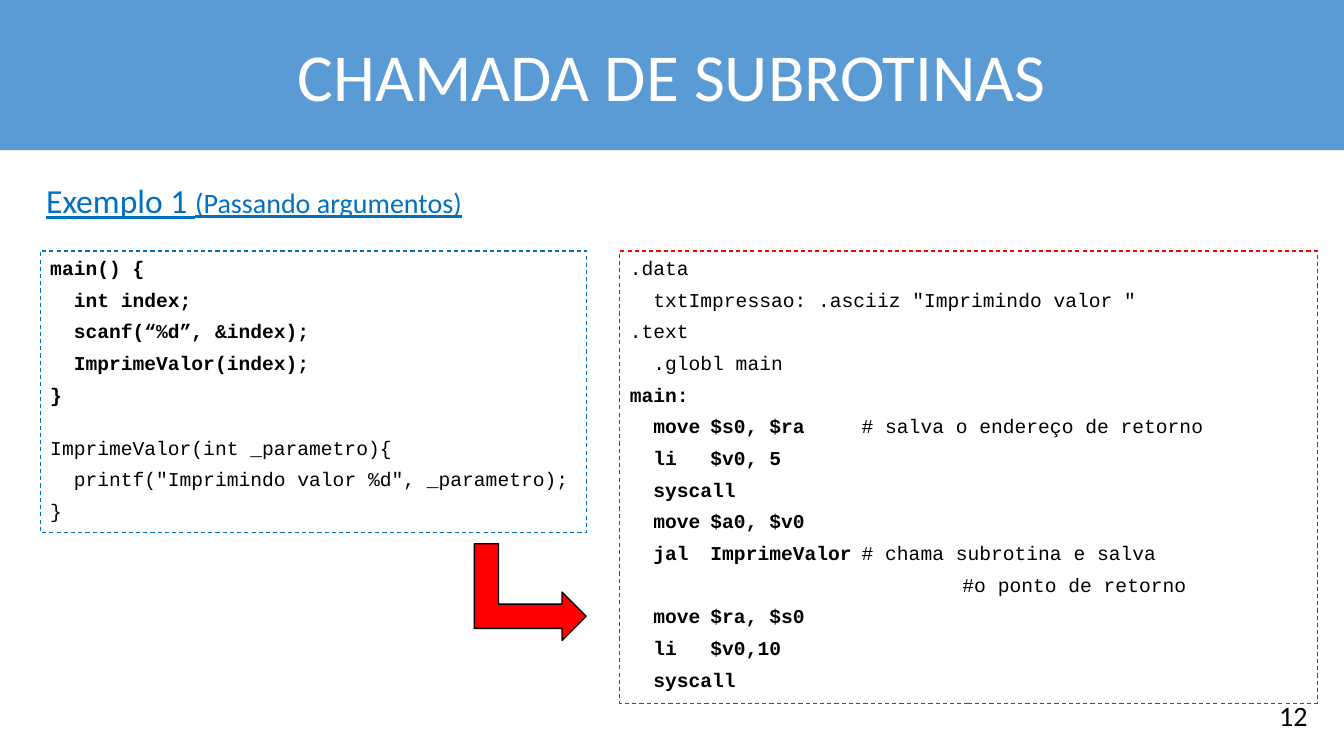
import dataclasses

import pptx
import pptx.dml.color
import pptx.enum.dml
import pptx.enum.shapes
import pptx.enum.text
import pptx.util

Pt = pptx.util.Pt
RGB = pptx.dml.color.RGBColor.from_string
ALIGN = pptx.enum.text.PP_ALIGN
ANCHOR = pptx.enum.text.MSO_ANCHOR
SHAPE = pptx.enum.shapes.MSO_SHAPE


@dataclasses.dataclass(frozen=True)
class Theme:
    text_font: str = "Calibri"
    code_font: str = "Courier New"
    banner: str = "5B9BD5"
    white: str = "FFFFFF"
    black: str = "000000"
    blue: str = "0070C0"
    red: str = "FF0000"
    title_size: float = 48
    heading_size: float = 24
    body_size: float = 20
    code_size: float = 14


THEME = Theme()
HANG = 21.6           # hanging indent of every code line
STEP = 16.8           # one level of code indentation: two characters
COMMENT_LEFT = 237.6  # column of the comments
LINE_GAP = 5.8
BLOCK_GAP = 21


@dataclasses.dataclass(frozen=True)
class Code:
    text: str = ""
    level: int = 0
    bold: bool = False
    comment: str = ""
    gap: float = LINE_GAP


C_LINES = [
    Code("main() {", bold=True),
    Code("int index;", 1, True),
    Code("scanf(“%d”, &index);", 1, True),
    Code("ImprimeValor(index);", 1, True),
    Code("}", bold=True),
    Code("ImprimeValor(int _parametro){", gap=BLOCK_GAP),
    Code('printf("Imprimindo valor %d", _parametro);', 1),
    Code("}"),
]

ASSEMBLY_LINES = [
    Code(".data"),
    Code('txtImpressao: .asciiz "Imprimindo valor "', 1),
    Code(".text"),
    Code(".globl main", 1),
    Code("main:", bold=True),
    Code("move\t$s0, $ra\t\t", 1, True, "# salva o endereço de retorno"),
    Code("li\t$v0, 5", 1, True),
    Code("syscall", 1, True),
    Code("move\t$a0, $v0", 1, True),
    Code("jal\tImprimeValor\t", 1, True, "# chama subrotina e salva"),
    Code(comment="#o ponto de retorno"),
    Code("move\t$ra, $s0", 1, True),
    Code("li\t$v0,10", 1, True),
    Code("syscall", 1, True),
]


def add_run(p, text, size, color, font=THEME.text_font, bold=False, underline=False):
    r = p.add_run()
    r.text = text
    r.font.name = font
    r.font.size = Pt(size)
    r.font.color.rgb = RGB(color)
    r.font.bold = bold
    r.font.underline = underline


def set_indent(p, left, first):
    pPr = p._p.get_or_add_pPr()
    pPr.set("marL", str(Pt(left)))
    pPr.set("indent", str(Pt(first)))


def set_title(s, text):
    sp = s.shapes.title
    sp.left, sp.top, sp.width, sp.height = Pt(0), Pt(0), Pt(960), Pt(107.3)
    sp.fill.solid()
    sp.fill.fore_color.rgb = RGB(THEME.banner)
    tf = sp.text_frame
    tf.auto_size = pptx.enum.text.MSO_AUTO_SIZE.NONE
    tf.vertical_anchor = ANCHOR.MIDDLE
    p = tf.paragraphs[0]
    p.alignment = ALIGN.CENTER
    add_run(p, text, THEME.title_size, THEME.white)


def add_text(s, left, top, width, height, align=ALIGN.LEFT):
    """Add a wrapping text box and return its first paragraph."""
    sp = s.shapes.add_textbox(Pt(left), Pt(top), Pt(width), Pt(height))
    sp.text_frame.word_wrap = True
    p = sp.text_frame.paragraphs[0]
    p.alignment = align
    return p


def add_code_box(s, left, top, width, height, color, lines):
    sp = s.shapes.add_shape(SHAPE.RECTANGLE, Pt(left), Pt(top), Pt(width), Pt(height))
    sp.shadow.inherit = False
    sp.fill.background()
    sp.line.color.rgb = RGB(color)
    sp.line.width = Pt(0.75)
    sp.line.dash_style = pptx.enum.dml.MSO_LINE.DASH
    tf = sp.text_frame
    tf.word_wrap = True
    tf.vertical_anchor = ANCHOR.TOP
    for i, line in enumerate(lines):
        p = tf.add_paragraph() if i else tf.paragraphs[0]
        p.alignment = ALIGN.LEFT
        p.space_before = Pt(line.gap)
        if line.text:
            set_indent(p, HANG, line.level * STEP - HANG)
            add_run(p, line.text, THEME.code_size, THEME.black, THEME.code_font, line.bold)
        else:
            set_indent(p, COMMENT_LEFT, 0)
        if line.comment:
            add_run(p, line.comment, THEME.code_size, THEME.black, THEME.code_font)


def add_bent_arrow(s, left, top, width, height):
    sp = s.shapes.add_shape(SHAPE.BENT_UP_ARROW, Pt(left), Pt(top), Pt(width), Pt(height))
    sp.rotation = 90
    sp.shadow.inherit = False
    sp.fill.solid()
    sp.fill.fore_color.rgb = RGB(THEME.red)
    sp.line.color.rgb = RGB(THEME.black)
    sp.line.width = Pt(1)


def main():
    prs = pptx.Presentation()
    prs.slide_width, prs.slide_height = Pt(960), Pt(540)
    s = prs.slides.add_slide(prs.slide_layouts.get_by_name("Title Only"))

    set_title(s, "CHAMADA DE SUBROTINAS")
    p = add_text(s, 884.2, 495.4, 56.9, 31.7, ALIGN.RIGHT)
    add_run(p, "12", THEME.body_size, THEME.black)
    add_code_box(s, 28.8, 179.3, 390.2, 200.9, THEME.blue, C_LINES)
    add_code_box(s, 442.8, 179.3, 498.2, 323.3, THEME.red, ASSEMBLY_LINES)
    add_bent_arrow(s, 344.2, 383, 69.1, 79.9)
    p = add_text(s, 25.9, 125.3, 805, 36)
    add_run(p, "Exemplo 1 ", THEME.heading_size, THEME.blue, underline=True)
    add_run(p, "(Passando argumentos)", THEME.body_size, THEME.blue, underline=True)

    prs.save("out.pptx")


if __name__ == "__main__":
    main()
